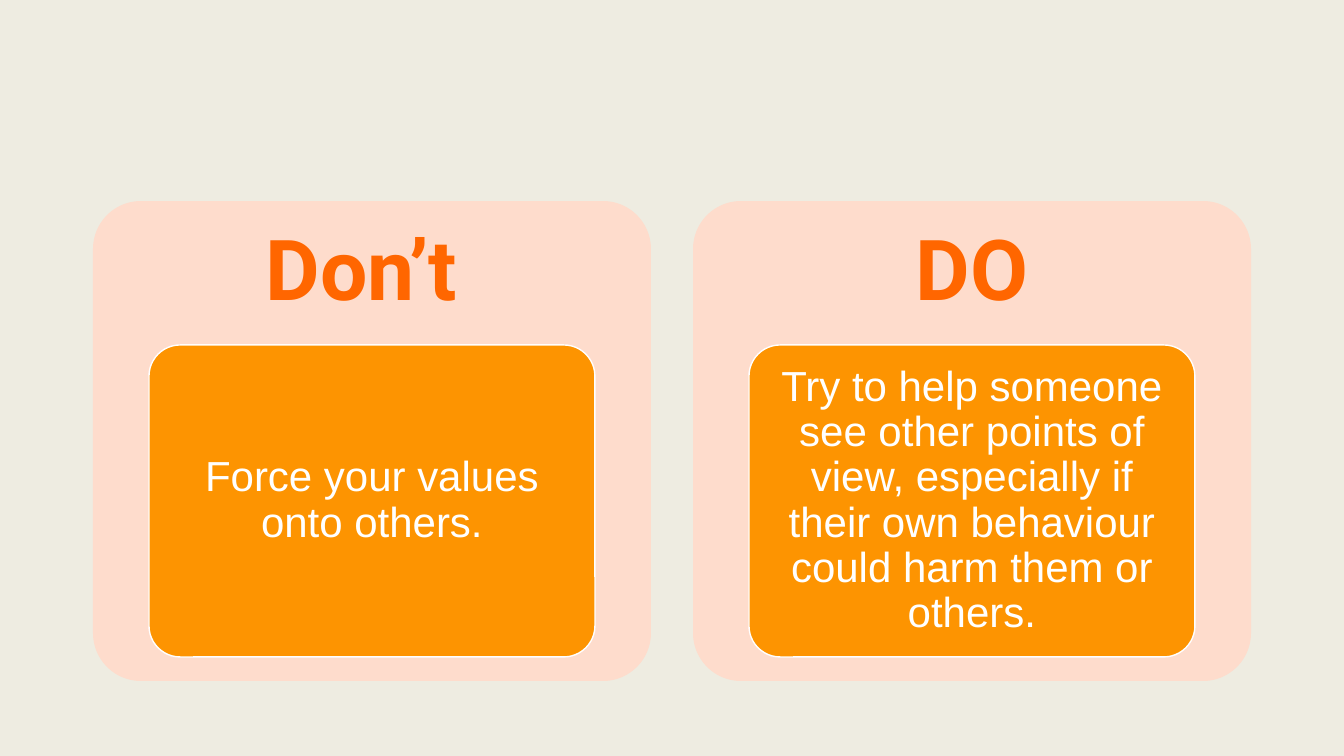
import pptx
import pptx.dml.color
import pptx.enum.shapes
import pptx.enum.text
import pptx.util

EMU_PER_PX = 914400 / 100.8
ADVICE = [
    ("Don’t ", "Force your values onto others."),
    ("DO", "Try to help someone see other points of view, especially if "
           "their own behaviour could harm them or others."),
]


def px(length):
    """Turn pixels into EMU."""
    return pptx.util.Emu(round(length * EMU_PER_PX))


def color(value):
    """Turn a hex string into a colour."""
    return pptx.dml.color.RGBColor.from_string(value)


def add_rounded(slide, left, top, width, height, fill, line=None):
    """Add a rounded rectangle with an optional outline."""
    shape = slide.shapes.add_shape(
        pptx.enum.shapes.MSO_SHAPE.ROUNDED_RECTANGLE,
        px(left), px(top), px(width), px(height))
    shape.adjustments[0] = 0.1
    shape.shadow.inherit = False
    shape.fill.solid()
    shape.fill.fore_color.rgb = color(fill)
    if line:
        shape.line.color.rgb = color(line)
        shape.line.width = pptx.util.Pt(1)
    else:
        shape.line.fill.background()
    return shape


def write(shape, text, inset_x, inset_y, font_name, size, text_color, bold=False):
    """Put one centred paragraph into a shape."""
    frame = shape.text_frame
    frame.text = text
    frame.word_wrap = True
    frame.vertical_anchor = pptx.enum.text.MSO_ANCHOR.MIDDLE
    frame.margin_left = frame.margin_right = px(inset_x)
    frame.margin_top = frame.margin_bottom = px(inset_y)
    paragraph = frame.paragraphs[0]
    paragraph.alignment = pptx.enum.text.PP_ALIGN.CENTER
    paragraph.line_spacing = 0.9
    font = paragraph.runs[0].font
    font.name = font_name
    font.size = pptx.util.Pt(size)
    font.bold = bold
    font.color.rgb = color(text_color)


def add_advice_panel(slide, left, top, width, height, heading, advice):
    """Draw a panel with a heading above a card of advice."""
    add_rounded(slide, left, top, width, height, "FEDCCC")
    heading_height = round(height * 0.3)
    heading_box = slide.shapes.add_textbox(
        px(left), px(top), px(width), px(heading_height))
    write(heading_box, heading, 25, 25, "Roboto", 60, "FF6600", bold=True)
    side = round(width * 0.1)
    card = add_rounded(
        slide, left + side, top + heading_height, width - 2 * side,
        round(height * 0.65), "FD9401", "FFFFFF")
    write(card, advice, 8, 6, "Arial", 30, "FFFFFF")


def main():
    """Build the slide and save it."""
    presentation = pptx.Presentation()
    presentation.slide_width = px(1344)
    presentation.slide_height = px(756)
    slide = presentation.slides.add_slide(presentation.slide_layouts[6])
    slide.background.fill.solid()
    slide.background.fill.fore_color.rgb = color("EEECE1")
    width, gap = 558, 42
    for index, (heading, advice) in enumerate(ADVICE):
        left = 93 + index * (width + gap)
        add_advice_panel(slide, left, 201, width, 480, heading, advice)
    presentation.save("out.pptx")


if __name__ == "__main__":
    main()
